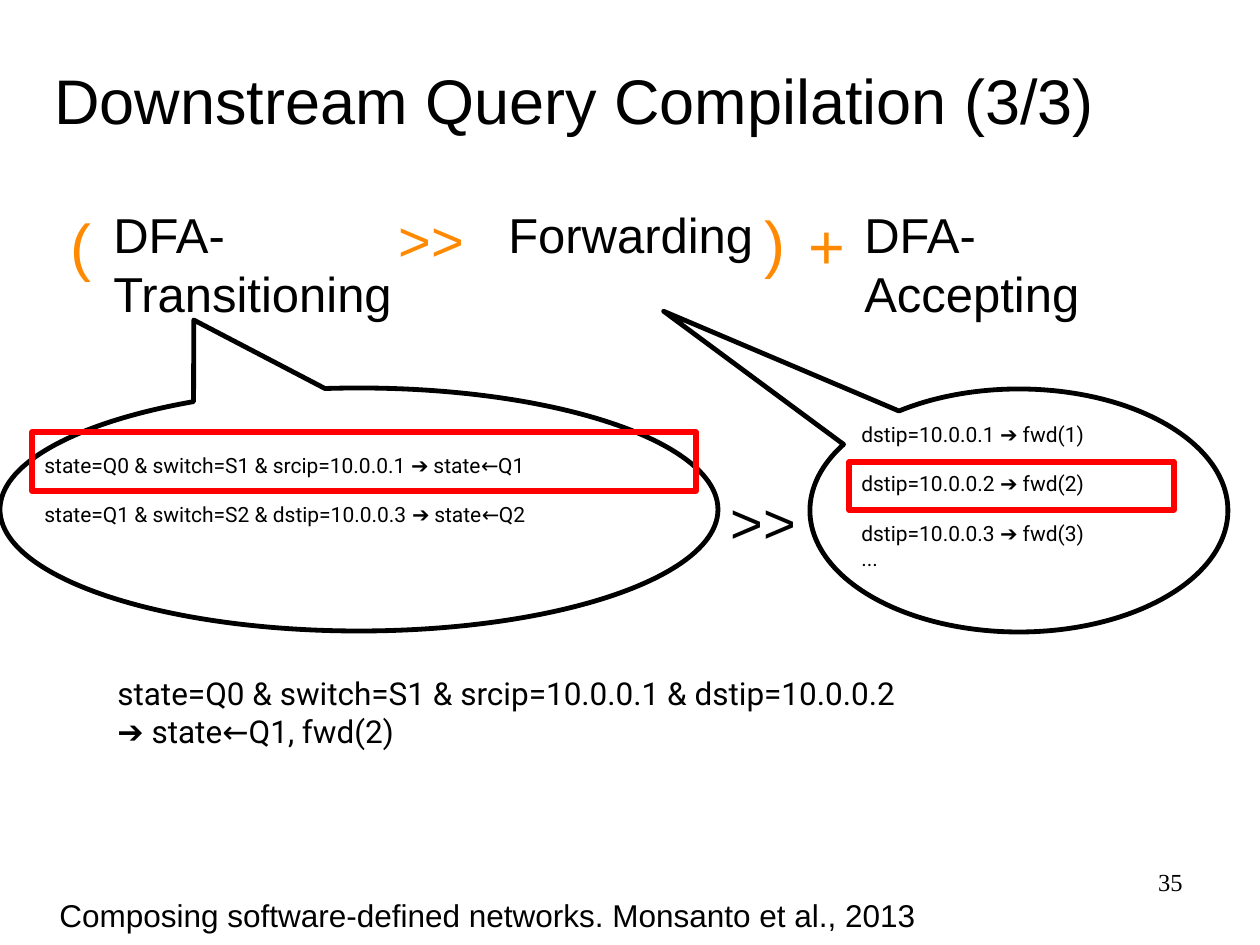
from dataclasses import dataclass

from pptx import Presentation
from pptx.dml.color import RGBColor
from pptx.enum.shapes import MSO_SHAPE as Shape
from pptx.enum.text import MSO_ANCHOR as Anchor, PP_ALIGN as Align
from pptx.util import Emu, Pt

PX = 914400 / 126
COLORS = {"ink": "000000", "operator": "FF8A01", "match": "FF0000"}


@dataclass(frozen=True)
class Area:
    left: int
    top: int
    width: int
    height: int

    def emu(self) -> list[Emu]:
        return [Emu(round(n * PX)) for n in (self.left, self.top, self.width, self.height)]


@dataclass(frozen=True)
class Label:
    area: Area
    lines: tuple[str, ...]
    size: int
    font: str = "Arial"
    color: str = "ink"
    align: Align = Align.LEFT
    anchor: Anchor = Anchor.TOP
    spaced: tuple[int, ...] = ()


@dataclass(frozen=True)
class Outline:
    area: Area
    kind: Shape
    color: str
    weight: float
    tip: tuple[float, ...] = ()


LABELS = [
    Label(Area(42, 53, 1111, 93), ("Downstream Query Compilation (3/3)",), 36, anchor=Anchor.MIDDLE),
    Label(Area(101, 198, 329, 131), ("DFA-Transitioning",), 28),
    Label(Area(496, 198, 287, 72), ("Forwarding",), 28),
    Label(Area(852, 198, 287, 131), ("DFA-Accepting",), 28),
    Label(Area(58, 200, 58, 89), ("(",), 36, color="operator"),
    Label(Area(386, 199, 111, 81), (">>",), 32, color="operator"),
    Label(Area(752, 197, 58, 89), (")",), 36, color="operator"),
    Label(Area(796, 200, 71, 89), ("+",), 36, color="operator"),
    Label(
        Area(32, 446, 664, 115),
        (
            "state=Q0 & switch=S1 & srcip=10.0.0.1 ➔ state←Q1",
            "state=Q1 & switch=S2 & dstip=10.0.0.3 ➔ state←Q2",
        ),
        12, "Roboto", spaced=(1,),
    ),
    Label(Area(718, 481, 111, 81), (">>",), 32),
    Label(
        Area(849, 415, 350, 165),
        (*(f"dstip=10.0.0.{n} ➔ fwd({n})" for n in (1, 2, 3)), "..."),
        12, "Roboto", spaced=(1, 2),
    ),
    Label(
        Area(105, 668, 1094, 89),
        ("state=Q0 & switch=S1 & srcip=10.0.0.1 & dstip=10.0.0.2", "➔ state←Q1, fwd(2)"),
        18, "Roboto",
    ),
    Label(Area(47, 890, 1045, 50), ("Composing software-defined networks. Monsanto et al., 2013",), 18),
    Label(Area(903, 861, 292, 64), ("35",), 14, "Times New Roman", align=Align.RIGHT),
]

OUTLINES = [
    Outline(Area(0, 388, 718, 243), Shape.OVAL_CALLOUT, "ink", 2.75, (-0.23, -0.78)),
    Outline(Area(810, 389, 418, 243), Shape.OVAL_CALLOUT, "ink", 2.75, (-0.85, -0.82)),
    Outline(Area(32, 432, 664, 59), Shape.RECTANGLE, "match", 3),
    Outline(Area(849, 462, 325, 48), Shape.RECTANGLE, "match", 3),
]


def draw_label(page, label: Label) -> None:
    frame = page.shapes.add_textbox(*label.area.emu()).text_frame
    frame.word_wrap = True
    frame.vertical_anchor = label.anchor
    for index, line in enumerate(label.lines):
        para = frame.add_paragraph() if index else frame.paragraphs[0]
        para.text = line
        para.alignment = label.align
        para.font.name = label.font
        para.font.size = Pt(label.size)
        para.font.color.rgb = RGBColor.from_string(COLORS[label.color])
        if index in label.spaced:
            para.space_before = Pt(14)


def draw_outline(page, outline: Outline) -> None:
    shape = page.shapes.add_shape(outline.kind, *outline.area.emu())
    shape.shadow.inherit = False
    shape.fill.background()
    shape.line.color.rgb = RGBColor.from_string(COLORS[outline.color])
    shape.line.width = Pt(outline.weight)
    for index, value in enumerate(outline.tip):
        shape.adjustments[index] = value


def main() -> None:
    deck = Presentation()
    deck.slide_width, deck.slide_height = Area(0, 0, 1260, 945).emu()[2:]
    page = deck.slides.add_slide(deck.slide_layouts[6])
    for outline in OUTLINES:
        draw_outline(page, outline)
    for label in LABELS:
        draw_label(page, label)
    deck.save("out.pptx")


if __name__ == "__main__":
    main()
